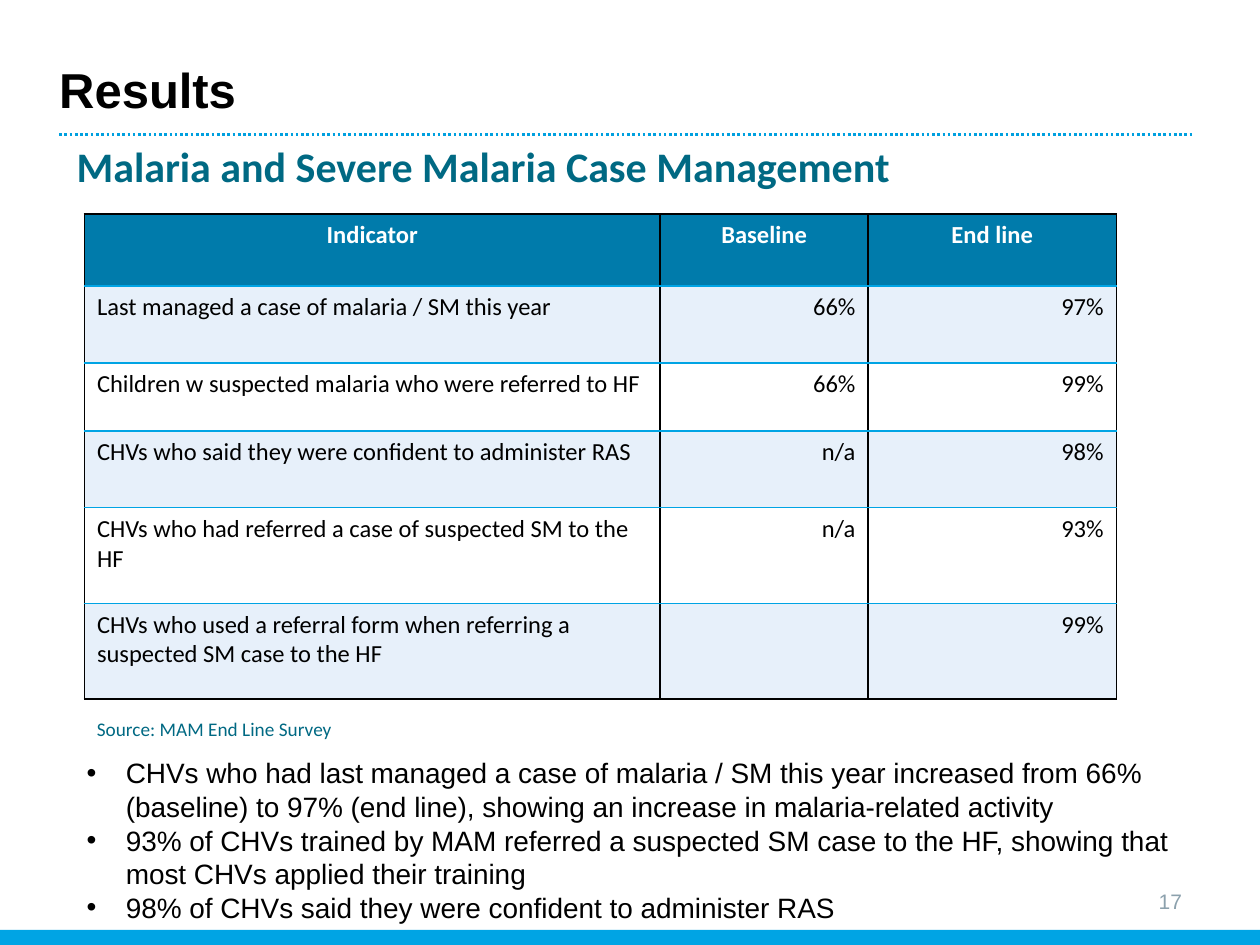
from lxml.etree import SubElement
from pptx import Presentation
from pptx.dml.color import RGBColor
from pptx.enum.dml import MSO_LINE
from pptx.enum.shapes import MSO_CONNECTOR, MSO_SHAPE
from pptx.enum.text import MSO_ANCHOR, PP_ALIGN
from pptx.oxml.ns import qn
from pptx.util import Inches, Pt

TITLE = "Results"
SUBTITLE = "Malaria and Severe Malaria Case Management"
HEADER = ("Indicator", "Baseline", "End line")
ROWS = [
    ("Last managed a case of malaria / SM this year", "66%", "97%"),
    ("Children w suspected malaria who were referred to HF", "66%", "99%"),
    ("CHVs who said they were confident to administer RAS", "n/a", "98%"),
    ("CHVs who had referred a case of suspected SM to the HF", "n/a", "93%"),
    ("CHVs who used a referral form when referring a suspected SM case to the HF", "", "99%"),
]
SOURCE = "Source: MAM End Line Survey"
FINDINGS = [
    "CHVs who had last managed a case of malaria / SM this year increased from 66% "
    "(baseline) to 97% (end line), showing an increase in malaria-related activity",
    "93% of CHVs trained by MAM referred a suspected SM case to the HF, showing that "
    "most CHVs applied their training",
    "98% of CHVs said they were confident to administer RAS",
]
PAGE = "17"

THEME = {
    "head_font": "Arial", "body_font": "Calibri",
    "title": 28, "subtitle": 24, "finding": 16, "cell": 14, "page": 12, "source": 11,
    "black": "000000", "white": "FFFFFF", "teal": "006983", "grey": "8CA1AD",
    "bar": "00A4E4", "dots": "00A0DF", "header": "007BAB", "band": "E7F0FA",
}
W, H = 10, 7.5
LEFT, RIGHT, RULE_Y = 0.47, 9.48, 1.07
BAR_H = 0.12
TABLE_X, TABLE_Y = 0.67, 1.7
COL_W = (4.57, 1.65, 1.97)
ROW_H = (0.57, 0.61, 0.54, 0.61, 0.76, 0.76)
BULLET_INDENT = 0.31


def color(name):
    return RGBColor.from_string(THEME[name])


def write(tf, lines, *, size, fill="black", font="body_font", bold=False,
          align=PP_ALIGN.LEFT, bullet=False):
    for i, line in enumerate(lines):
        p = tf.paragraphs[0] if i == 0 else tf.add_paragraph()
        p.alignment = align
        if bullet:
            pPr = p._p.get_or_add_pPr()
            pPr.set("marL", str(Inches(BULLET_INDENT)))
            pPr.set("indent", str(-Inches(BULLET_INDENT)))
            SubElement(pPr, qn("a:buFont"), typeface="Arial")
            SubElement(pPr, qn("a:buChar"), char="•")
        r = p.add_run()
        r.text = line
        r.font.name, r.font.size, r.font.bold = THEME[font], Pt(THEME[size]), bold
        r.font.color.rgb = color(fill)


def add_text(s, box, lines, *, anchor=MSO_ANCHOR.TOP, insets=(0.1, 0.05), top=None, **fmt):
    tf = s.shapes.add_textbox(*map(Inches, box)).text_frame
    tf.word_wrap = True
    tf.vertical_anchor = anchor
    tf.margin_left = tf.margin_right = Inches(insets[0])
    tf.margin_top = Inches(insets[1] if top is None else top)
    tf.margin_bottom = Inches(insets[1])
    write(tf, lines, **fmt)


def set_borders(cell, **sides):
    tcPr = cell._tc.get_or_add_tcPr()
    for i, (side, name) in enumerate(sides.items()):
        ln = SubElement(tcPr, qn(f"a:ln{side}"), w=str(Pt(1)))
        SubElement(SubElement(ln, qn("a:solidFill")), qn("a:srgbClr"), val=THEME[name])
        tcPr.remove(ln)
        tcPr.insert(i, ln)  # borders come before the fill


def add_frame(s):
    """Draw the bar along the foot and the dotted rule under the title."""
    bar = s.shapes.add_shape(MSO_SHAPE.RECTANGLE, 0, Inches(H - BAR_H), Inches(W), Inches(BAR_H))
    bar.shadow.inherit = False
    bar.fill.solid()
    bar.fill.fore_color.rgb = color("bar")
    bar.line.fill.background()
    rule = s.shapes.add_connector(MSO_CONNECTOR.STRAIGHT, Inches(LEFT), Inches(RULE_Y),
                                  Inches(RIGHT), Inches(RULE_Y))
    rule.line.color.rgb = color("dots")
    rule.line.width = Pt(1.5)
    rule.line.dash_style = MSO_LINE.ROUND_DOT
    SubElement(rule._element.spPr, qn("a:effectLst"))


def add_results(s):
    data = [HEADER, *ROWS]
    table = s.shapes.add_table(len(data), len(HEADER), Inches(TABLE_X), Inches(TABLE_Y),
                               Inches(sum(COL_W)), Inches(sum(ROW_H))).table
    for col, w in zip(table.columns, COL_W):
        col.width = Inches(w)
    for row, h in zip(table.rows, ROW_H):
        row.height = Inches(h)
    last = len(data) - 1
    for i, values in enumerate(data):
        for j, value in enumerate(values):
            cell = table.cell(i, j)
            cell.fill.solid()
            cell.fill.fore_color.rgb = color("header" if i == 0 else "band" if i % 2 else "white")
            set_borders(cell, L="black", R="black", T="black" if i == 0 else "bar",
                        B="black" if i == last else "bar")
            if i == 0:
                write(cell.text_frame, [value], size="cell", fill="white", bold=True,
                      align=PP_ALIGN.CENTER)
            elif value:
                write(cell.text_frame, [value], size="cell",
                      align=PP_ALIGN.RIGHT if j else PP_ALIGN.LEFT)


def main():
    prs = Presentation()
    prs.slide_width, prs.slide_height = Inches(W), Inches(H)
    s = prs.slides.add_slide(prs.slide_layouts[6])
    add_frame(s)
    add_text(s, (LEFT, 0.39, RIGHT - LEFT, 0.63), [TITLE], size="title", font="head_font",
             bold=True, anchor=MSO_ANCHOR.MIDDLE, insets=(0, 0.04))
    add_text(s, (RIGHT - 2.33, 6.95, 2.33, 0.4), [PAGE], size="page", font="head_font",
             fill="grey", align=PP_ALIGN.RIGHT, anchor=MSO_ANCHOR.MIDDLE)
    add_text(s, (0.59, 5.48, 9.06, 1.92), FINDINGS, size="finding", font="head_font",
             bullet=True, top=0.52)
    add_results(s)
    add_text(s, (TABLE_X, 5.64, 4.88, 0.29), [SOURCE], size="source", fill="teal")
    add_text(s, (0.51, RULE_Y, 7.56, 0.5), [SUBTITLE], size="subtitle", fill="teal", bold=True)
    prs.save("out.pptx")


if __name__ == "__main__":
    main()
